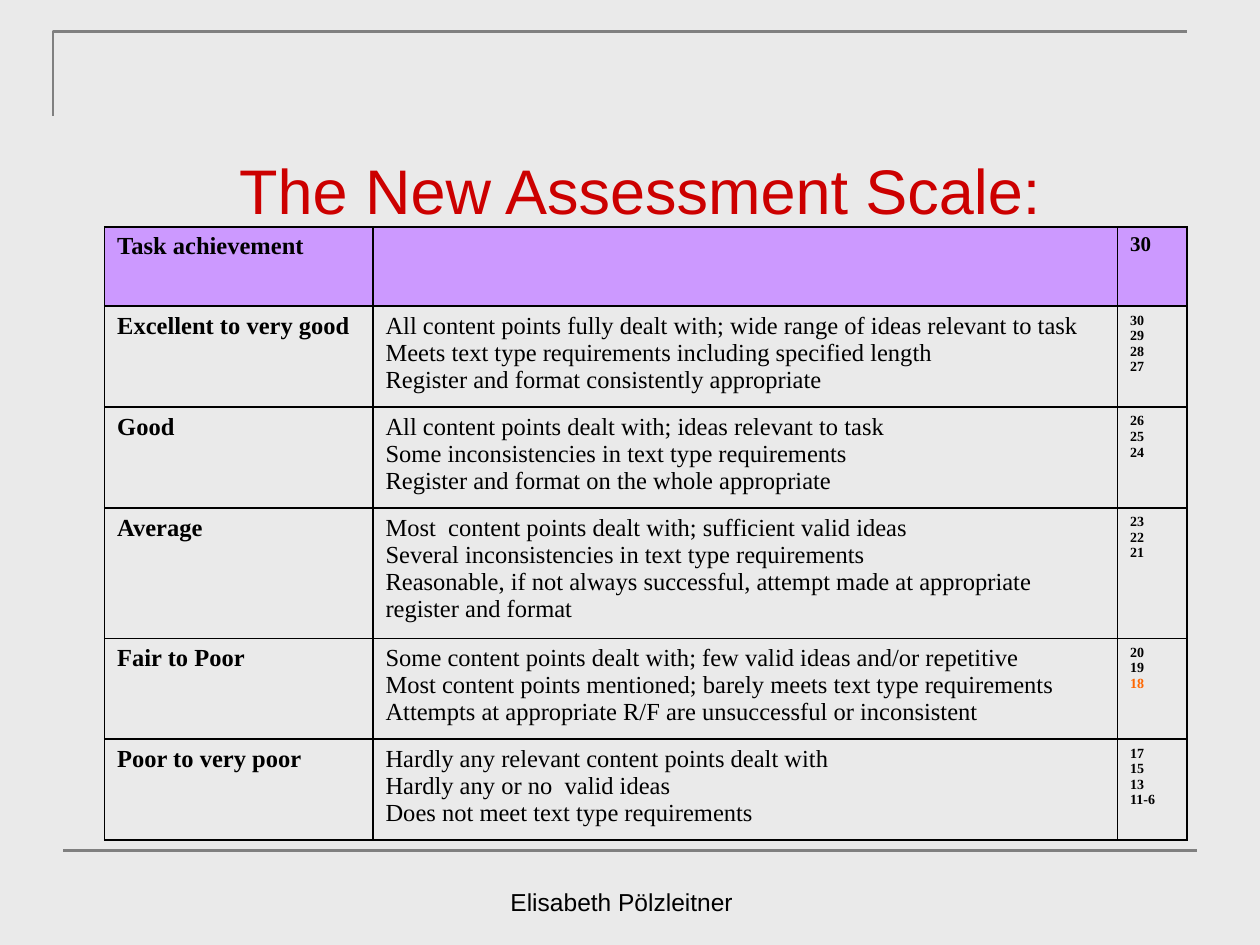
from dataclasses import dataclass

from lxml import etree
from pptx import Presentation
from pptx import util as u
from pptx.dml.color import RGBColor
from pptx.enum import shapes, text
from pptx.oxml import parse_xml
from pptx.oxml.ns import nsdecls, qn


@dataclass(frozen=True)
class Theme:
    back: str = "EAEAEA"
    rule: str = "808080"
    ink: str = "000000"
    title: str = "CC0000"
    head: str = "CC99FF"
    mark: str = "FF6600"
    sans: str = "Arial"
    serif: str = "Times New Roman"
    big: int = 36
    body: int = 14
    total: int = 12
    score: int = 8


T = Theme()
WIDE, HIGH = u.Inches(10), u.Inches(7.5)
COLS = (2.13, 5.91, 0.55)
ROWS = (0.63, 0.79, 0.79, 1.02, 0.79, 0.75)
HANG = u.Inches(0.38)
ORANGE = "18"  # the score set in orange

BANDS = [
    ("Excellent to very good",
     ["All content points fully dealt with; wide range of ideas relevant to task",
      "Meets text type requirements including specified length",
      "Register and format consistently appropriate"],
     ["30", "29", "28", "27"]),
    ("Good",
     ["All content points dealt with; ideas relevant to task",
      "Some inconsistencies in text type requirements",
      "Register and format on the whole appropriate"],
     ["26", "25", "24"]),
    ("Average",
     ["Most  content points dealt with; sufficient valid ideas",
      "Several inconsistencies in text type requirements",
      "Reasonable, if not always successful, attempt made at appropriate",
      "register and format"],
     ["23", "22", "21"]),
    ("Fair to Poor",
     ["Some content points dealt with; few valid ideas and/or repetitive",
      "Most content points mentioned; barely meets text type requirements",
      "Attempts at appropriate R/F are unsuccessful or inconsistent"],
     ["20", "19", ORANGE]),
    ("Poor to very poor",
     ["Hardly any relevant content points dealt with",
      "Hardly any or no  valid ideas",
      "Does not meet text type requirements"],
     ["17", "15", "13", "11-6"]),
]


def area(x, y, w, h):
    """Turn shares of the slide into a box in EMU."""
    return int(x * WIDE), int(y * HIGH), int(w * WIDE), int(h * HIGH)


def put(para, words, size, font, hue, bold=False):
    run = para.add_run()
    run.text = words
    run.font.size, run.font.name, run.font.bold = u.Pt(size), font, bold
    run.font.color.rgb = RGBColor.from_string(hue)


def stroke(line):
    line.color.rgb = RGBColor.from_string(T.rule)
    line.width = u.Pt(1.5)


def frame(slide, box):
    """Corner line at the top left of the slide."""
    x, y, w, h = box
    path = slide.shapes.build_freeform(x, y + h)
    path.add_line_segments([(x, y), (x + w, y)], close=False)
    shape = path.convert_to_shape()
    shape.shadow.inherit = False
    shape.fill.background()
    stroke(shape.line)


def footer(slide, box, rule):
    """Rule across the foot, with a name below."""
    x, y, w, _ = rule
    line = slide.shapes.add_connector(shapes.MSO_CONNECTOR.STRAIGHT, x, y, x + w, y)
    stroke(line.line)
    etree.SubElement(line.element.spPr, qn("a:effectLst"))
    body = slide.shapes.add_textbox(*box).text_frame
    body.word_wrap = True
    body.vertical_anchor = text.MSO_ANCHOR.BOTTOM
    para = body.paragraphs[0]
    para.alignment = text.PP_ALIGN.CENTER
    put(para, "Elisabeth Pölzleitner", T.body, T.sans, T.ink)


def heading(slide, box):
    head = slide.shapes.title
    head.left, head.top, head.width, head.height = box
    body = head.text_frame
    body.word_wrap = True
    body.auto_size = text.MSO_AUTO_SIZE.NONE
    body.vertical_anchor = text.MSO_ANCHOR.BOTTOM
    body.margin_bottom = u.Inches(0.06)
    para = body.paragraphs[0]
    para.alignment = text.PP_ALIGN.CENTER
    put(para, "The New Assessment Scale:", T.big, T.sans, T.title)
    slide.shapes.element.append(head.element)  # in front of the table


def border(cell):
    props = cell._tc.get_or_add_tcPr()
    for side in ("lnL", "lnR", "lnT", "lnB"):
        props.append(parse_xml(
            f'<a:{side} {nsdecls("a")} w="12700"><a:solidFill>'
            f'<a:srgbClr val="{T.ink}"/></a:solidFill></a:{side}>'))


def write(cell, lines, size, bold, just):
    body = cell.text_frame
    for i, words in enumerate(lines):
        para = body.add_paragraph() if i else body.paragraphs[0]
        para.alignment = text.PP_ALIGN.JUSTIFY if just else text.PP_ALIGN.LEFT
        props = para._p.get_or_add_pPr()
        props.set("marL", str(HANG))
        props.set("indent", str(-HANG))
        put(para, words, size, T.serif, T.mark if words == ORANGE else T.ink, bold)


def scale(slide, box):
    """Band, descriptors and scores, under a coloured header row."""
    x, y, w, h = box
    table = slide.shapes.add_table(len(ROWS), len(COLS), x, y, w, h).table
    for col, part in zip(table.columns, COLS):
        col.width = int(w * part / sum(COLS))
    for row, part in zip(table.rows, ROWS):
        row.height = int(h * part / sum(ROWS))

    data = [("Task achievement", [], ["30"])] + BANDS
    for r, (band, notes, marks) in enumerate(data):
        top = r == 0
        parts = (
            ([band], T.body, True, top),
            (notes, T.body, False, False),
            (marks, T.total if top else T.score, True, True),
        )
        for c, part in enumerate(parts):
            cell = table.cell(r, c)
            border(cell)
            if top:
                cell.fill.solid()
                cell.fill.fore_color.rgb = RGBColor.from_string(T.head)
            else:
                cell.fill.background()
            write(cell, *part)


def main():
    deck = Presentation()
    deck.slide_width, deck.slide_height = WIDE, HIGH
    slide = deck.slides.add_slide(deck.slide_layouts[5])
    slide.background.fill.solid()
    slide.background.fill.fore_color.rgb = RGBColor.from_string(T.back)

    frame(slide, area(0.42 / 10, 0.25 / 7.5, 0.9, 0.67 / 7.5))
    footer(slide, area(3.35 / 10, 6.82 / 7.5, 3.17 / 10, 0.5 / 7.5),
           area(0.05, 0.9, 0.9, 0))
    scale(slide, area(0.83 / 10, 0.24, sum(COLS) / 10, sum(ROWS) / 7.5))
    heading(slide, area(0.59 / 10, 1.15 / 7.5, 8.98 / 10, 0.71 / 7.5))
    deck.save("out.pptx")


if __name__ == "__main__":
    main()
